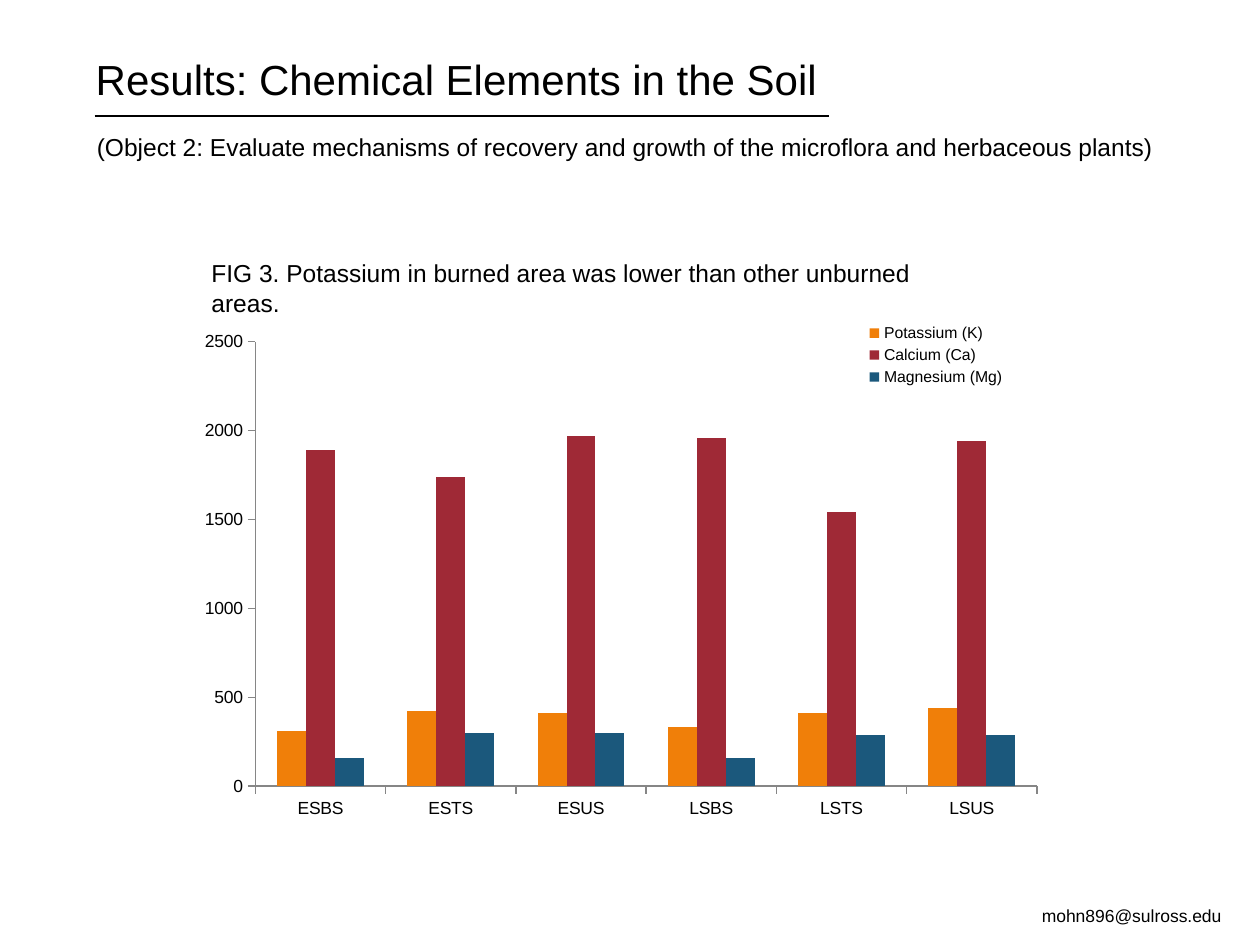
"""Build the slide on chemical elements in the soil."""
from lxml import etree
from pptx import Presentation
from pptx.chart.data import CategoryChartData
from pptx.dml.color import RGBColor
from pptx.enum.chart import XL_CHART_TYPE as ChartType, XL_LEGEND_POSITION as LegendPos
from pptx.enum.chart import XL_TICK_MARK as Tick
from pptx.enum.shapes import MSO_CONNECTOR as Connector
from pptx.enum.text import MSO_ANCHOR as Anchor, PP_ALIGN as Align
from pptx.oxml.ns import qn
from pptx.util import Inches, Pt

BLACK = RGBColor(0x00, 0x00, 0x00)
GREY = RGBColor(0x86, 0x86, 0x86)
ORANGE = RGBColor(0xF0, 0x7F, 0x09)
RED = RGBColor(0x9F, 0x29, 0x36)
BLUE = RGBColor(0x1B, 0x58, 0x7C)

SITES = ["ESBS", "ESTS", "ESUS", "LSBS", "LSTS", "LSUS"]
ELEMENTS = [
    ("Potassium (K)", [310, 420, 410, 330, 410, 440], ORANGE),
    ("Calcium (Ca)", [1890, 1740, 1970, 1960, 1540, 1940], RED),
    ("Magnesium (Mg)", [160, 300, 300, 160, 290, 290], BLUE),
]


def set_font(font, size, color=BLACK, name="Arial"):
    font.size, font.name, font.color.rgb = Pt(size), name, color


def write(tf, text, size=14, wrap=True, anchor=Anchor.TOP, align=Align.LEFT):
    tf.word_wrap, tf.vertical_anchor = wrap, anchor
    p = tf.paragraphs[0]
    p.alignment = align
    r = p.add_run()
    r.text = text
    set_font(r.font, size)


def set_layout(parent, index, box, inner=False):
    for old in parent.findall(qn("c:layout")):
        parent.remove(old)
    layout = etree.Element(qn("c:layout"))
    manual = etree.SubElement(layout, qn("c:manualLayout"))
    items = [("layoutTarget", "inner")] if inner else []
    items += [("xMode", "edge"), ("yMode", "edge"), *zip("xywh", box)]
    for tag, val in items:
        etree.SubElement(manual, qn(f"c:{tag}")).set("val", str(val))
    parent.insert(index, layout)


class SlideBuilder:
    """Hold the slide and add styled elements to it."""

    def __init__(self, prs):
        self.s = prs.slides.add_slide(prs.slide_layouts[5])

    def title(self, text, x, y, w, h):
        sp = self.s.shapes.title
        sp.left, sp.top, sp.width, sp.height = map(Inches, (x, y, w, h))
        write(sp.text_frame, text, size=24, anchor=Anchor.MIDDLE)

    def text(self, text, x, y, w, h, **fmt):
        sp = self.s.shapes.add_textbox(*map(Inches, (x, y, w, h)))
        write(sp.text_frame, text, **fmt)

    def line(self, x1, y1, x2, y2):
        cn = self.s.shapes.add_connector(Connector.STRAIGHT, *map(Inches, (x1, y1, x2, y2)))
        cn.line.color.rgb, cn.line.width = BLACK, Pt(0.75)
        etree.SubElement(cn.element.spPr, qn("a:effectLst"))

    def column_chart(self, cats, series, x, y, w, h):
        data = CategoryChartData()
        data.categories = cats
        for name, vals, _ in series:
            data.add_series(name, vals)
        frame = self.s.shapes.add_chart(
            ChartType.COLUMN_CLUSTERED, *map(Inches, (x, y, w, h)), data)
        chart = frame.chart
        chart.has_title = False
        set_font(chart.font, 10)
        plot = chart.plots[0]
        plot.gap_width, plot.overlap, plot.vary_by_categories = 150, 0, False
        for ser, (_, _, color) in zip(plot.series, series):
            ser.format.fill.solid()
            ser.format.fill.fore_color.rgb = color
        for axis in (chart.category_axis, chart.value_axis):
            axis.has_major_gridlines = False
            axis.major_tick_mark, axis.minor_tick_mark = Tick.OUTSIDE, Tick.NONE
            axis.format.line.color.rgb = GREY
        value = chart.value_axis
        value.minimum_scale, value.maximum_scale, value.major_unit = 0, 2500, 500
        chart.has_legend = True
        legend = chart.legend
        legend.position, legend.include_in_layout = LegendPos.RIGHT, False
        set_font(legend.font, 9)
        plot_area = chart.element.find(".//" + qn("c:plotArea"))
        set_layout(plot_area, 0, (0.1, 0.05, 0.89, 0.83), inner=True)
        set_layout(chart.element.find(".//" + qn("c:legend")), 1, (0.79, 0.01, 0.17, 0.13))


def main():
    prs = Presentation()
    prs.slide_width, prs.slide_height = Inches(10), Inches(7.5)
    b = SlideBuilder(prs)
    b.title("Results: Chemical Elements in the Soil", 0.66, 0.25, 8.21, 0.75)
    b.column_chart(SITES, ELEMENTS, 1.33, 2.5, 6.97, 4.25)
    b.line(0.75, 0.92, 6.58, 0.92)
    b.text("(Object 2: Evaluate mechanisms of recovery and growth of the microflora "
           "and herbaceous plants)", 0.67, 1, 8.67, 0.34, wrap=False)
    b.text("FIG 3. Potassium in burned area was lower than other unburned areas.",
           1.58, 2, 6, 0.57)
    b.text("mohn896@sulross.edu", 8.17, 7.13, 1.67, 0.27, size=10)
    prs.save("out.pptx")


if __name__ == "__main__":
    main()
